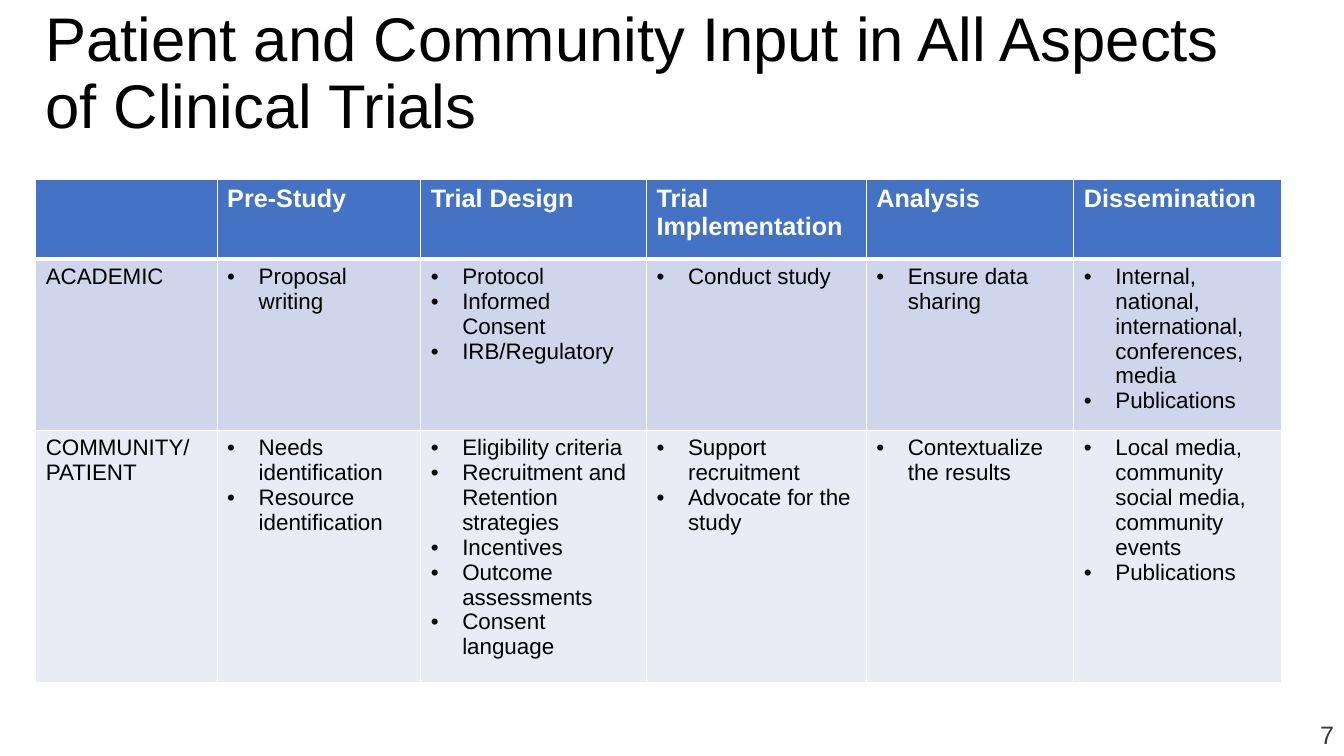
"""Build the slide on patient and community input in clinical trials."""
from lxml import etree
from pptx import Presentation
from pptx.dml.color import RGBColor
from pptx.enum.text import MSO_ANCHOR, PP_ALIGN
from pptx.oxml.ns import qn
from pptx.util import Pt

LEFT, RIGHT, MIDDLE = PP_ALIGN.LEFT, PP_ALIGN.RIGHT, MSO_ANCHOR.MIDDLE

TITLE = "Patient and Community Input in All Aspects of Clinical Trials"
PAGE = "7"
HEADS = ["", "Pre-Study", "Trial Design", "Trial Implementation", "Analysis", "Dissemination"]
ROWS = [
    [
        ["ACADEMIC"],
        ["Proposal writing"],
        ["Protocol", "Informed Consent", "IRB/Regulatory"],
        ["Conduct study"],
        ["Ensure data sharing"],
        ["Internal, national, international, conferences, media", "Publications"],
    ],
    [
        ["COMMUNITY/", "PATIENT"],
        ["Needs identification", "Resource identification"],
        ["Eligibility criteria", "Recruitment and Retention strategies", "Incentives",
         "Outcome assessments", "Consent language"],
        ["Support recruitment", "Advocate for the study"],
        ["Contextualize the results"],
        ["Local media, community social media, community events", "Publications"],
    ],
]
WIDTHS = [129.6, 145.4, 161.3, 157, 148.3, 148.3]
HEIGHTS = [56.9, 115.2, 115.2]
FILLS = ["4472C4", "CFD5EA", "E9EBF5"]
INDENT = Pt(22.5)


def color(code):
    return RGBColor.from_string(code)


def style(par, size, code, bold=False):
    font = par.font
    font.name, font.size, font.bold = "Arial", Pt(size), bold
    font.color.rgb = color(code)


def bullet(par):
    props = par._p.get_or_add_pPr()
    props.set("marL", str(INDENT))
    props.set("indent", str(-INDENT))
    etree.SubElement(props, qn("a:buFont")).set("typeface", "Arial")
    etree.SubElement(props, qn("a:buChar")).set("char", "•")


def border(cell, row):
    props = cell._tc.get_or_add_tcPr()
    thick = {0: "B", 1: "T"}.get(row)
    for side in "LRTB":
        width = Pt(3 if side == thick else 1)
        line = etree.SubElement(props, qn("a:ln" + side), w=str(width))
        fill = etree.SubElement(line, qn("a:solidFill"))
        etree.SubElement(fill, qn("a:srgbClr"), val="FFFFFF")


def fill_cell(cell, lines, row, col):
    border(cell, row)
    cell.fill.solid()
    cell.fill.fore_color.rgb = color(FILLS[row])
    cell.text = "\n".join(lines)
    for par in cell.text_frame.paragraphs:
        if row and col:
            bullet(par)
        if row:
            style(par, 16, "000000")
        else:
            style(par, 18, "FFFFFF", True)


def add_title(slide):
    title = slide.shapes.title
    title.left, title.top, title.width, title.height = Pt(25.2), Pt(1.4), Pt(882.7), Pt(104.4)
    frame = title.text_frame
    frame.text = TITLE
    frame.word_wrap = True
    frame.vertical_anchor = MIDDLE
    par = frame.paragraphs[0]
    par.alignment, par.line_spacing = LEFT, 0.9
    style(par, 44, "000000")


def add_grid(slide):
    size = Pt(sum(WIDTHS)), Pt(sum(HEIGHTS))
    grid = slide.shapes.add_table(len(HEIGHTS), len(WIDTHS), Pt(25.5), Pt(128.3), *size).table
    for col, width in enumerate(WIDTHS):
        grid.columns[col].width = Pt(width)
    for row, cells in enumerate([[[head] for head in HEADS], *ROWS]):
        grid.rows[row].height = Pt(HEIGHTS[row])
        for col, lines in enumerate(cells):
            fill_cell(grid.cell(row, col), lines, row, col)


def add_page(slide):
    frame = slide.shapes.add_textbox(Pt(840), Pt(510), Pt(120), Pt(29)).text_frame
    frame.word_wrap = True
    frame.text = PAGE
    par = frame.paragraphs[0]
    par.alignment = RIGHT
    style(par, 18, "3B3838")


def main():
    deck = Presentation()
    deck.slide_width, deck.slide_height = Pt(960), Pt(540)
    slide = deck.slides.add_slide(deck.slide_layouts[5])
    add_page(slide)
    add_title(slide)
    add_grid(slide)
    deck.save("out.pptx")


if __name__ == "__main__":
    main()
